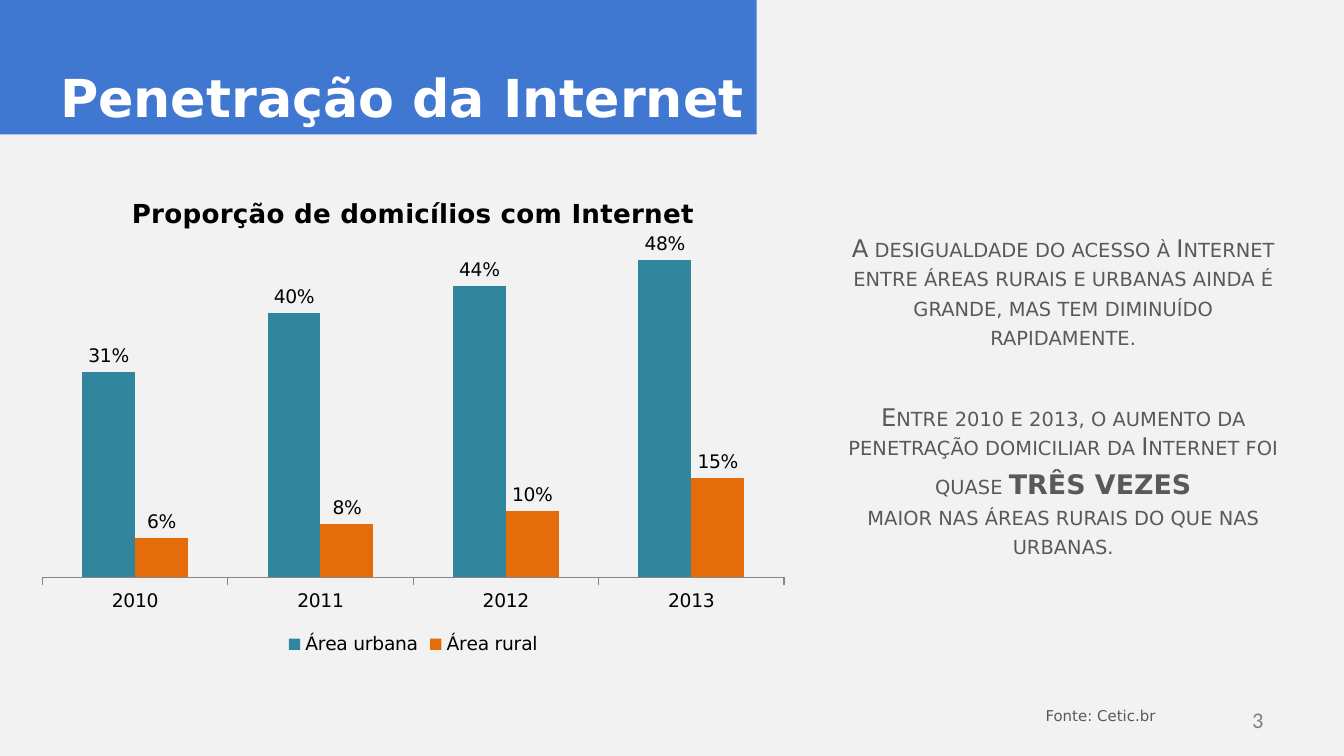
from dataclasses import dataclass

from lxml.etree import SubElement
from pptx import Presentation
from pptx.chart.data import CategoryChartData
from pptx.dml.color import RGBColor
from pptx.enum.chart import XL_CHART_TYPE, XL_LABEL_POSITION, XL_LEGEND_POSITION, XL_TICK_LABEL_POSITION, XL_TICK_MARK
from pptx.enum.shapes import MSO_SHAPE
from pptx.enum.text import MSO_ANCHOR, PP_ALIGN
from pptx.oxml.ns import qn
from pptx.util import Cm, Pt


@dataclass(frozen=True)
class Theme:
    background: str = "F2F2F2"
    banner: str = "3F77D1"
    banner_text: str = "FFFFFF"
    body: str = "595959"
    number: str = "808080"
    chart_text: str = "000000"
    axis: str = "868686"
    urban: str = "31859C"
    rural: str = "E46C0A"
    font: str = "DejaVu Sans"
    number_font: str = "Calibri"
    title_size: float = 28
    emphasis_size: float = 18
    chart_title_size: float = 14
    body_size: float = 13
    number_size: float = 12
    chart_size: float = 10
    source_size: float = 8
    section_gap: float = 28


@dataclass(frozen=True)
class Area:
    left: float
    top: float
    width: float
    height: float

    def lengths(self) -> tuple:
        return Cm(self.left), Cm(self.top), Cm(self.width), Cm(self.height)


@dataclass(frozen=True)
class Series:
    name: str
    values: tuple
    color: str


THEME = Theme()
YEARS = ("2010", "2011", "2012", "2013")
SERIES = (
    Series("Área urbana", (0.31, 0.40, 0.44, 0.48), THEME.urban),
    Series("Área rural", (0.06, 0.08, 0.10, 0.15), THEME.rural),
)


def rgb(color: str) -> RGBColor:
    return RGBColor.from_string(color)


def style_font(font, size: float, color: str, bold: bool = False, name: str = THEME.font) -> None:
    font.name = name
    font.size = Pt(size)
    font.bold = bold
    font.color.rgb = rgb(color)


def add_text(paragraph, text: str, *, size: float = THEME.body_size, color: str = THEME.body,
             bold: bool = False, name: str = THEME.font, small_caps: bool = False,
             align=PP_ALIGN.LEFT, space_before: float = 0) -> None:
    paragraph.alignment = align
    if space_before:
        paragraph.space_before = Pt(space_before)
    span = paragraph.add_run()
    span.text = text
    style_font(span.font, size, color, bold, name)
    if small_caps:
        span._r.get_or_add_rPr().set("cap", "small")


def add_box(page, area: Area, anchor=MSO_ANCHOR.TOP):
    frame = page.shapes.add_textbox(*area.lengths()).text_frame
    frame.word_wrap = True
    frame.vertical_anchor = anchor
    return frame


def add_banner(page, area: Area, text: str) -> None:
    banner = page.shapes.add_shape(MSO_SHAPE.RECTANGLE, *area.lengths())
    banner.shadow.inherit = False
    banner.fill.solid()
    banner.fill.fore_color.rgb = rgb(THEME.banner)
    banner.line.fill.background()
    frame = banner.text_frame
    frame.word_wrap = True
    frame.vertical_anchor = MSO_ANCHOR.BOTTOM
    add_text(frame.paragraphs[0], text, size=THEME.title_size, color=THEME.banner_text,
             bold=True, align=PP_ALIGN.RIGHT)


def place_plot(chart, left: float, top: float, width: float, height: float) -> None:
    plot_area = chart._chartSpace.chart.plotArea
    for old in plot_area.findall(qn("c:layout")):
        plot_area.remove(old)
    layout = SubElement(plot_area, qn("c:layout"))
    plot_area.insert(0, layout)
    manual = SubElement(layout, qn("c:manualLayout"))
    settings = {"layoutTarget": "inner", "xMode": "edge", "yMode": "edge",
                "x": left, "y": top, "w": width, "h": height}
    for tag, value in settings.items():
        SubElement(manual, qn(f"c:{tag}")).set("val", str(value))


def add_column_chart(page, area: Area, title: str, series_list: tuple[Series, ...]) -> None:
    data = CategoryChartData(number_format="0%")
    data.categories = YEARS
    for item in series_list:
        data.add_series(item.name, item.values)
    chart = page.shapes.add_chart(XL_CHART_TYPE.COLUMN_CLUSTERED, *area.lengths(), data).chart
    style_font(chart.font, THEME.chart_size, THEME.chart_text)

    chart.has_title = True
    add_text(chart.chart_title.text_frame.paragraphs[0], title, size=THEME.chart_title_size,
             color=THEME.chart_text, bold=True, align=PP_ALIGN.CENTER)
    chart.chart_title.include_in_layout = False
    chart.has_legend = True
    chart.legend.position = XL_LEGEND_POSITION.BOTTOM
    chart.legend.include_in_layout = False
    style_font(chart.legend.font, THEME.chart_size, THEME.chart_text)

    categories = chart.category_axis
    categories.major_tick_mark = XL_TICK_MARK.OUTSIDE
    categories.tick_label_position = XL_TICK_LABEL_POSITION.LOW
    categories.format.line.color.rgb = rgb(THEME.axis)
    style_font(categories.tick_labels.font, THEME.chart_size, THEME.chart_text)
    values = chart.value_axis
    values.minimum_scale = 0
    values.maximum_scale = 0.5
    values.has_major_gridlines = False
    values.tick_labels.number_format = "0%"
    values.tick_labels.number_format_is_linked = False
    values.visible = False

    plot = chart.plots[0]
    plot.gap_width = 150
    plot.overlap = 0
    plot.vary_by_categories = False
    for series, item in zip(plot.series, series_list):
        series.format.fill.solid()
        series.format.fill.fore_color.rgb = rgb(item.color)
        labels = series.data_labels
        labels.show_value = True
        labels.position = XL_LABEL_POSITION.OUTSIDE_END
        labels.number_format = "0%"
        labels.number_format_is_linked = False
        style_font(labels.font, THEME.chart_size, THEME.chart_text)
    place_plot(chart, 0.02, 0.15, 0.96, 0.68)


def add_commentary(page, area: Area) -> None:
    frame = add_box(page, area)
    body = {"small_caps": True, "align": PP_ALIGN.CENTER}
    add_text(frame.paragraphs[0], "A desigualdade do acesso à Internet entre áreas rurais e urbanas "
             "ainda é grande, mas tem diminuído rapidamente.", **body)
    growth = frame.add_paragraph()
    add_text(growth, "Entre 2010 e 2013, o aumento da penetração domiciliar da Internet foi quase ",
             space_before=THEME.section_gap, **body)
    add_text(growth, "três vezes", size=THEME.emphasis_size, bold=True, **body)
    add_text(frame.add_paragraph(), "maior nas áreas rurais do que nas urbanas.", **body)


def main() -> None:
    deck = Presentation()
    deck.slide_width, deck.slide_height = Cm(25.4), Cm(14.29)
    page = deck.slides.add_slide(deck.slide_layouts[6])
    page.background.fill.solid()
    page.background.fill.fore_color.rgb = rgb(THEME.background)

    number = add_box(page, Area(18.21, 13.23, 5.92, 0.76), MSO_ANCHOR.MIDDLE)
    add_text(number.paragraphs[0], "3", size=THEME.number_size, color=THEME.number,
             name=THEME.number_font, align=PP_ALIGN.RIGHT)
    add_banner(page, Area(0, 0, 14.3, 2.54), "Penetração da Internet")
    add_column_chart(page, Area(0.51, 3.28, 14.6, 9.2), "Proporção de domicílios com Internet", SERIES)
    add_commentary(page, Area(15.7, 4.29, 8.79, 6.71))
    source = add_box(page, Area(19.51, 13.23, 2.87, 0.61))
    add_text(source.paragraphs[0], "Fonte: Cetic.br", size=THEME.source_size)
    deck.save("out.pptx")


if __name__ == "__main__":
    main()
